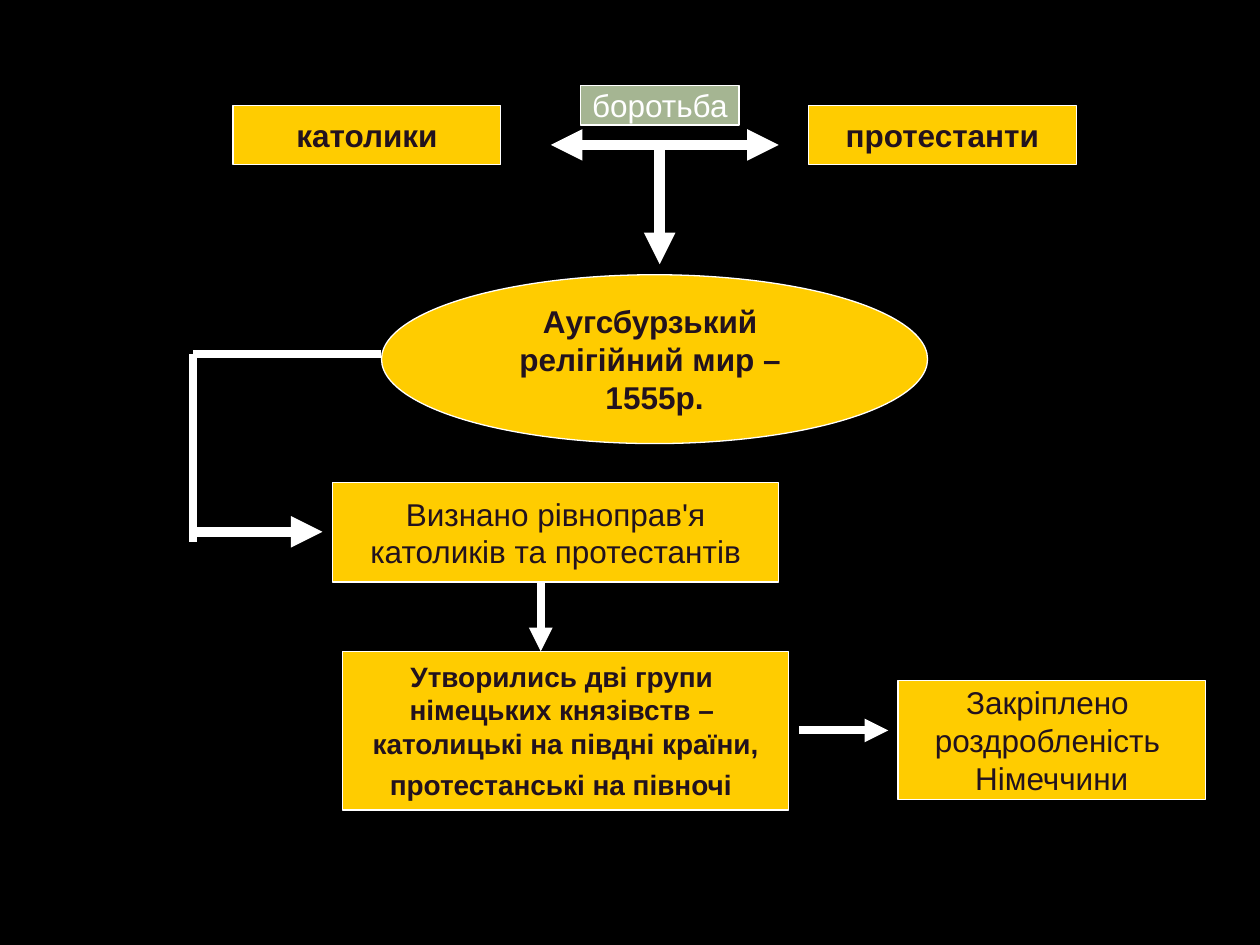
from dataclasses import dataclass

from lxml.etree import SubElement
from pptx import Presentation
from pptx.dml.color import RGBColor as Color
from pptx.enum.shapes import MSO_CONNECTOR as Link, MSO_SHAPE as Shape
from pptx.enum.text import MSO_ANCHOR as Anchor, PP_ALIGN as Align
from pptx.oxml.ns import qn
from pptx.util import Pt


@dataclass(frozen=True)
class Theme:
    back: Color = Color(0, 0, 0)
    gold: Color = Color(0xFF, 0xCC, 0)
    sage: Color = Color(0xA5, 0xB5, 0x92)
    white: Color = Color(0xFF, 0xFF, 0xFF)
    ink: Color = Color(0x22, 0x12, 0x1E)
    font: str = "Arial"
    body: int = 18
    small: int = 16
    large: int = 20
    border: float = 0.75
    thin: float = 4.5
    thick: float = 6


THEME = Theme()


def apply(target, formats):
    for name, value in formats.items():
        setattr(target, name, value)


def add_span(para, text, size, bold, color):
    span = para.add_run()
    span.text = text
    apply(span.font, {"name": THEME.font, "size": Pt(size), "bold": bold})
    span.font.color.rgb = color
    return span


def add_box(page, bounds, lines, kind=Shape.RECTANGLE, fill=THEME.gold,
            color=THEME.ink, size=THEME.body, bold=False):
    box = page.shapes.add_shape(kind, *map(Pt, bounds))
    box.shadow.inherit = False
    box.fill.solid()
    box.fill.fore_color.rgb = fill
    box.line.color.rgb = THEME.white
    box.line.width = Pt(THEME.border)
    frame = box.text_frame
    apply(frame, {"word_wrap": False, "vertical_anchor": Anchor.MIDDLE})
    for index, text in enumerate(lines):
        para = frame.add_paragraph() if index else frame.paragraphs[0]
        para.alignment = Align.CENTER
        add_span(para, text, size, bold, color)
    return box


def add_line(page, start, end, width=THEME.thin, ends=()):
    line = page.shapes.add_connector(Link.STRAIGHT, *map(Pt, start + end))
    line.line.color.rgb = THEME.white
    line.line.width = Pt(width)
    outline = line.line._get_or_add_ln()
    for end_name in ends:
        SubElement(outline, qn(f"a:{end_name}"), type="triangle")
    SubElement(line._element.spPr, qn("a:effectLst"))


def add_peace(page):
    add_box(page, (218, 157, 312, 96.5),
            ["Аугсбурзький ", "релігійний мир – ", "1555р."],
            kind=Shape.OVAL, bold=True)
    add_line(page, (218, 202.3), (110.2, 202.3))
    add_line(page, (110.2, 202.3), (110.2, 309.6))
    add_line(page, (110.2, 303.9), (184.3, 303.9), THEME.thick, ["tailEnd"])


def add_outcomes(page):
    add_box(page, (190, 275.8, 255, 56.8),
            ["Визнано рівноправ'я", " католиків та протестантів "])
    add_line(page, (309, 332.6), (309, 372.2), ends=["tailEnd"])
    groups = add_box(page, (195.8, 372.2, 255, 90.7),
                     ["Утворились дві групи ", "німецьких князівств – ",
                      "католицькі на півдні країни,", "протестанські на півночі"],
                     size=THEME.small, bold=True)
    add_span(groups.text_frame.paragraphs[-1], " ", THEME.large, False, THEME.white)
    add_line(page, (456.5, 417.4), (507.6, 417.4), ends=["tailEnd"])
    add_box(page, (513.2, 389, 175.7, 67.9),
            ["Закріплено ", "роздробленість ", "Німеччини"])


def add_struggle(page):
    middle = 82.8
    add_line(page, (314.8, middle), (445, middle), THEME.thick, ["headEnd", "tailEnd"])
    for left, side in ((133.2, "католики"), (462, "протестанти")):
        add_box(page, (left, 60.3, 153, 33.8), [side], bold=True)
    add_line(page, (377, middle), (377, 151), THEME.thick, ["tailEnd"])
    add_box(page, (331.7, 48.8, 90.7, 22.6), ["боротьба"],
            fill=THEME.sage, color=THEME.white)


def main():
    deck = Presentation()
    apply(deck, {"slide_width": Pt(720), "slide_height": Pt(540)})
    page = deck.slides.add_slide(deck.slide_layouts[6])
    page.background.fill.solid()
    page.background.fill.fore_color.rgb = THEME.back
    add_peace(page)
    add_outcomes(page)
    add_struggle(page)
    deck.save("out.pptx")


if __name__ == "__main__":
    main()
